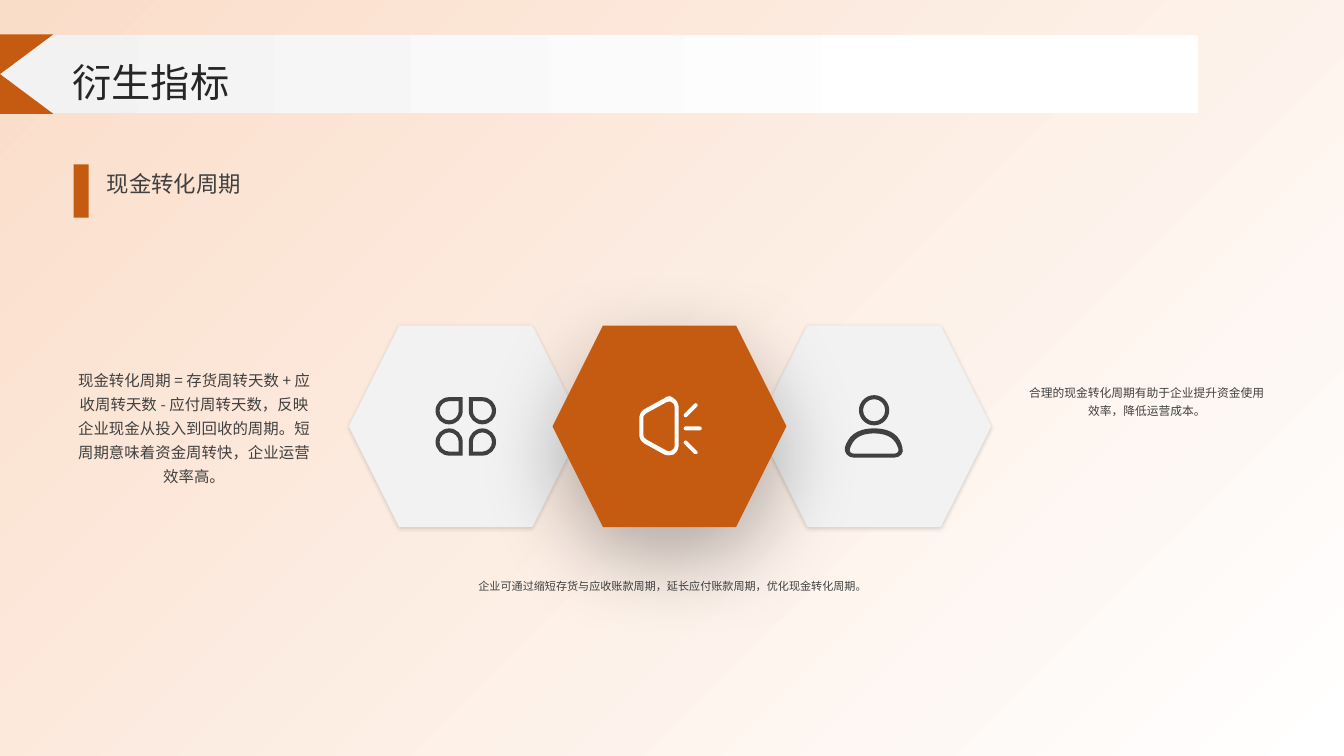
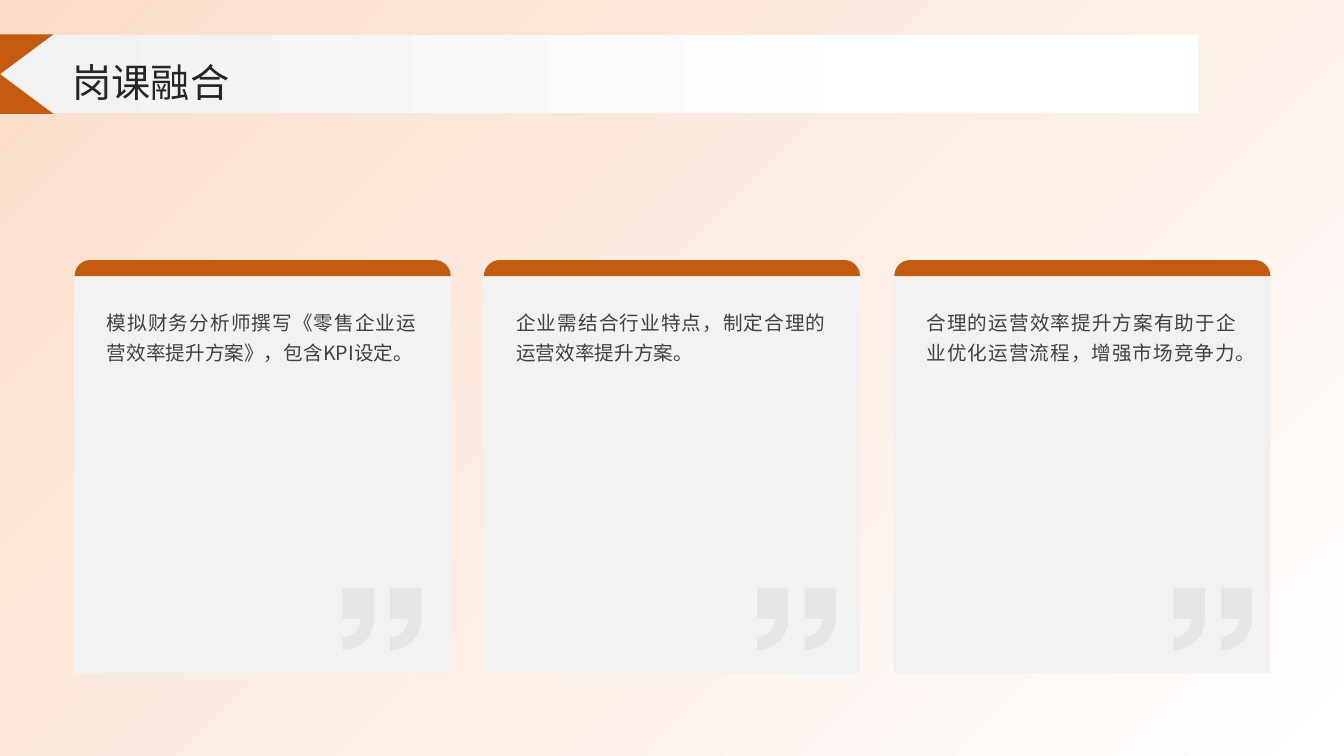
import math
import dataclasses

import lxml.etree
import pptx
import pptx.dml.color
import pptx.enum.shapes
import pptx.enum.text
import pptx.oxml.ns
import pptx.util

SCALE = 9144  # one px is a hundredth of an inch
WIDE, HIGH = 1333, 750
BOW = 0.55  # handle length of a quarter circle

KIND = pptx.enum.shapes.MSO_SHAPE
ALIGN = pptx.enum.text.PP_ALIGN
ANCHOR = pptx.enum.text.MSO_ANCHOR
SIZE = pptx.enum.text.MSO_AUTO_SIZE
qn = pptx.oxml.ns.qn


@dataclasses.dataclass(frozen=True)
class Theme:
    font: str = "Noto Sans CJK SC"
    main: str = "C55A11"
    peach: str = "FADDC9"
    white: str = "FFFFFF"
    pale: str = "F2F2F2"
    mark: str = "D9D9D9"
    ink: str = "404040"
    dark: str = "262626"
    title: float = 28
    head: float = 16
    body: float = 14
    note: float = 11
    small: float = 8.4
    tiny: float = 7.9


THEME = Theme()


def px(num):
    return pptx.util.Emu(round(num * SCALE))


def rgb(code):
    return pptx.dml.color.RGBColor.from_string(code)


# Basic elements

def paint(shape, color, alpha=100):
    shape.shadow.inherit = False
    shape.line.fill.background()
    shape.fill.solid()
    shape.fill.fore_color.rgb = rgb(color)
    if alpha < 100:
        tint = next(shape._element.spPr.iter(qn("a:srgbClr")))
        lxml.etree.SubElement(tint, qn("a:alpha"), val=str(alpha * 1000))
    return shape


def block(slide, box, color, kind=KIND.RECTANGLE):
    return paint(slide.shapes.add_shape(kind, *map(px, box)), color)


def blend(shape, stops, angle):
    shape.fill.gradient()
    shape.fill.gradient_angle = angle
    for stop, (place, color) in zip(shape.fill.gradient_stops, stops):
        stop.position = place
        stop.color.rgb = rgb(color)


def shade(shape, alpha, blur, dist):
    effects = shape._element.spPr.find(qn("a:effectLst"))
    outer = lxml.etree.SubElement(
        effects, qn("a:outerShdw"), blurRad=str(blur * 12700),
        dist=str(dist * 12700), dir="5400000", algn="t", rotWithShape="0")
    color = lxml.etree.SubElement(outer, qn("a:srgbClr"), val="000000")
    lxml.etree.SubElement(color, qn("a:alpha"), val=str(alpha * 1000))


def write(slide, box, text, size, color=THEME.ink, align=ALIGN.LEFT,
          anchor=ANCHOR.TOP, pad=0, space=1.3, grow=False):
    frame = slide.shapes.add_textbox(*map(px, box)).text_frame
    frame.word_wrap = True
    if grow:
        frame.auto_size = SIZE.SHAPE_TO_FIT_TEXT
    frame.vertical_anchor = anchor
    frame.margin_left = frame.margin_right = 0
    frame.margin_top = frame.margin_bottom = px(pad)
    frame.text = text
    para = frame.paragraphs[0]
    para.alignment = align
    para.line_spacing = space
    font = para.runs[0].font
    font.size = pptx.util.Pt(size)
    font.name = THEME.font
    font.color.rgb = rgb(color)
    lxml.etree.SubElement(font._element, qn("a:ea"), typeface=THEME.font)


# Outlines: a start point, then lines (x, y) and
# cubic curves (x1, y1, x2, y2, x, y)

def curve(shape, line, step):
    """Turn one straight piece of the shape into a cubic curve."""
    bow = lxml.etree.Element(qn("a:cubicBezTo"))
    for x, y in zip(step[::2], step[1::2]):
        lxml.etree.SubElement(bow, qn("a:pt"), x=str(px(x) - shape.left),
                              y=str(px(y) - shape.top))
    line.getparent().replace(line, bow)


def draw(slide, outlines, color, alpha=100):
    build, steps = None, []
    for first, *rest in outlines:
        spot = [px(num) for num in first]
        if build is None:
            build = slide.shapes.build_freeform(*spot, scale=1.0)
        else:
            build.move_to(*spot)
        build.add_line_segments([(px(s[-2]), px(s[-1])) for s in rest],
                                close=True)
        steps += rest
    shape = build.convert_to_shape()
    lines = list(shape._element.spPr.iter(qn("a:lnTo")))
    for line, step in zip(lines, steps):
        if len(step) == 6:
            curve(shape, line, step)
    return paint(shape, color, alpha)


def place(steps, mid, across, down):
    """Map unit steps to the given centre and the two axis vectors."""
    return [tuple(mid[axis] + x * across[axis] + y * down[axis]
                  for x, y in zip(step[::2], step[1::2]) for axis in (0, 1))
            for step in steps]


QUARTERS = [(BOW, 1, 1, BOW, 1, 0), (1, -BOW, BOW, -1, 0, -1),
            (-BOW, -1, -1, -BOW, -1, 0), (-1, BOW, -BOW, 1, 0, 1)]


def ring(mid, radius):
    return place([(0, 1), *QUARTERS], mid, (radius, 0), (0, radius))


def petal(mid, radius, flip, turn):
    return place([(0, 1), *QUARTERS[:3], (-1, 1)], mid,
                 (radius * flip, 0), (0, radius * turn))


def pill(tail, head, radius=2):
    dx, dy = head[0] - tail[0], head[1] - tail[1]
    size = math.hypot(dx, dy) / radius
    axes = (dx / size, dy / size), (-dy / size, dx / size)
    return (place([(0, 1), *QUARTERS[:2]], head, *axes)
            + place([(0, -1), *QUARTERS[2:]], tail, *axes))


# Icons

def clover(slide):
    mid = (462, 423)
    draw(slide, [petal((mid[0] + 16.5 * x, mid[1] + 15.5 * y), radius, x, y)
                 for x in (-1, 1) for y in (-1, 1)
                 for radius in (13.5, 9.5)], THEME.ink)


def horn(slide):
    outer = [(664, 393), (665, 393, 667, 394, 668, 395),
             (671, 397, 673, 400, 673, 403), (673, 443),
             (673, 446, 671, 449, 668, 451),
             (665, 452, 661, 452, 659, 451), (639, 440),
             (636, 438, 634, 435, 634, 431), (634, 414),
             (634, 411, 636, 408, 639, 406), (659, 395),
             (660, 394, 662, 393, 664, 393)]
    inner = [(661, 399), (641, 410),
             (639, 411, 638, 413, 638, 414), (638, 431),
             (638, 433, 639, 435, 641, 436), (661, 447),
             (663, 448, 664, 448, 666, 447),
             (668, 446, 669, 444, 669, 443), (669, 403),
             (669, 401, 668, 400, 666, 399),
             (665, 398, 663, 398, 661, 399)]
    rays = [pill((680, 439), (690, 449)), pill((680, 425), (694, 425)),
            pill((680, 412), (690, 402))]
    draw(slide, [*rays, inner, outer], THEME.white)


def person(slide):
    head = [ring((867, 407), radius) for radius in (11, 15)]
    outer = [(867, 425), (848, 425, 841, 434, 838, 444),
             (837, 449, 841, 454, 847, 454), (887, 454),
             (893, 454, 897, 449, 895, 444),
             (893, 434, 886, 425, 867, 425)]
    inner = [(867, 430), (852, 430, 846, 436, 843, 445),
             (842, 448, 844, 450, 847, 450), (887, 450),
             (890, 450, 892, 448, 891, 445),
             (888, 436, 882, 430, 867, 430)]
    draw(slide, [*head, inner, outer], THEME.ink)


# Parts of the slides

def start(deck):
    slide = deck.slides.add_slide(deck.slide_layouts[6])
    back = block(slide, (0, 0, WIDE, HIGH), THEME.white)
    blend(back, [(0, THEME.white), (1, THEME.peach)], 135)
    return slide


def banner(slide, title):
    band = block(slide, (0, 35, 1188, 77), THEME.pale)
    blend(band, [(0, THEME.pale), (0.8, THEME.white)], 0)
    block(slide, (-53, 34, 106, 79), THEME.main, KIND.FLOWCHART_COLLATE)
    write(slide, (72, 53, 1188, 51), title, THEME.title, THEME.dark,
          anchor=ANCHOR.MIDDLE, space=1.1)


def cell(slide, left, color, *shadow):
    shape = block(slide, (left, 323, 232, 200), color, KIND.HEXAGON)
    shade(shape, *shadow)


def card(slide, left, text):
    block(slide, (left, 274, 374, 394), THEME.pale)
    write(slide, (left + 33, 301, 307, 255), text, THEME.body,
          align=ALIGN.JUSTIFY)


def quote(slide, left):
    marks = [[(x, 583), (x + 31, 583), (x + 31, 614),
              (x + 31, 631, x + 17, 645, x, 645), (x, 632),
              (x + 10, 632, x + 17, 624, x + 18, 614), (x, 614)]
             for x in (left + 47, left)]
    draw(slide, marks, THEME.mark, 50)


def cap(slide, left):
    end = left + 373
    draw(slide, [[(left + 16, 258), (end - 16, 258),
                  (end - 7, 258, end, 265, end, 274), (left, 274),
                  (left, 265, left + 7, 258, left + 16, 258)]], THEME.main)


# Slides

def cycle(deck):
    slide = start(deck)
    notes = [
        ((470, 567, 394, 22), THEME.tiny,
         "企业可通过缩短存货与应收账款周期，延长应付账款周期，"
         "优化现金转化周期。"),
        ((73, 359, 239, 105), THEME.note,
         "现金转化周期 = 存货周转天数 + 应收周转天数 - 应付周转天数，"
         "反映企业现金从投入到回收的周期。短周期意味着资金周转快，"
         "企业运营效率高。"),
        ((1016, 374, 243, 38), THEME.small,
         "合理的现金转化周期有助于企业提升资金使用效率，降低运营成本。"),
    ]
    for box, size, text in notes:
        write(slide, box, text, size, align=ALIGN.CENTER, pad=4, grow=True)
    for left in (346, 751):
        cell(slide, left, THEME.pale, 15, 3, 1)
    clover(slide)
    cell(slide, 548, THEME.main, 30, 60, 20)
    horn(slide)
    person(slide)
    write(slide, (106, 161, 1044, 29), "现金转化周期", THEME.head, grow=True)
    block(slide, (73, 163, 15, 53), THEME.main)
    banner(slide, "衍生指标")


def fusion(deck):
    slide = start(deck)
    texts = [
        "模拟财务分析师撰写《零售企业运营效率提升方案》，包含KPI设定。",
        "企业需结合行业特点，制定合理的运营效率提升方案。",
        "合理的运营效率提升方案有助于企业优化运营流程，增强市场竞争力。",
    ]
    lefts = [73 + 813 * i // 2 for i in range(len(texts))]
    for left, text in zip(lefts, texts):
        card(slide, left, text)
    for left in (1164, 751, 340):
        quote(slide, left)
    for left in lefts:
        cap(slide, left + 1)
    banner(slide, "岗课融合")


def main():
    deck = pptx.Presentation()
    deck.slide_width, deck.slide_height = px(WIDE), px(HIGH)
    cycle(deck)
    fusion(deck)
    deck.save("out.pptx")


if __name__ == "__main__":
    main()
